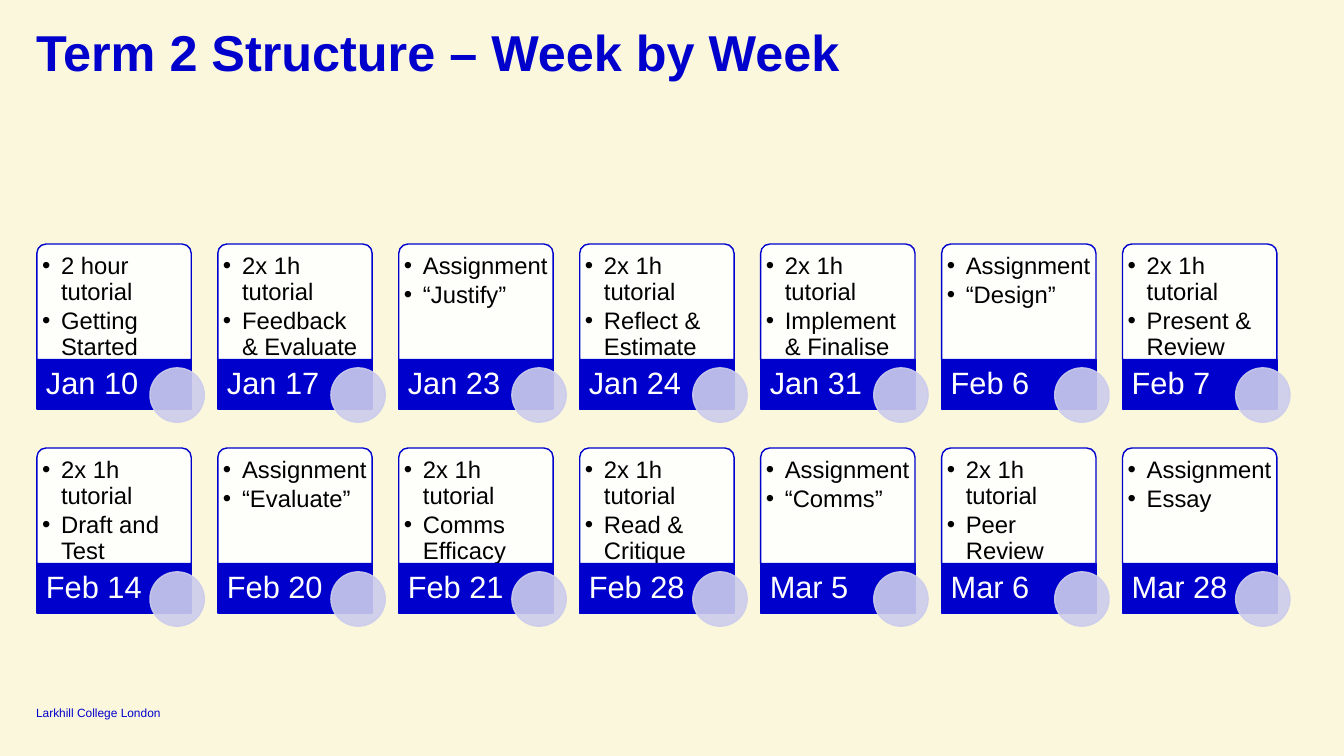
"""Build the week by week overview slide for term 2."""
from dataclasses import dataclass

from lxml.etree import SubElement
from pptx import Presentation
from pptx.dml.color import RGBColor
from pptx.dml.fill import FillFormat
from pptx.enum.shapes import MSO_SHAPE
from pptx.enum.text import MSO_ANCHOR, MSO_AUTO_SIZE, PP_ALIGN
from pptx.oxml.ns import qn
from pptx.shapes.autoshape import Shape
from pptx.slide import Slide
from pptx.util import Cm, Pt

CREAM = RGBColor(0xFB, 0xF7, 0xDC)
BLUE = RGBColor(0x00, 0x00, 0xCD)
LAVENDER = RGBColor(0xCC, 0xCC, 0xED)
WHITE = RGBColor(0xFF, 0xFF, 0xFF)
BLACK = RGBColor(0x00, 0x00, 0x00)

FONT = "Arial"
COLUMNS = 7
GRID_LEFT, GRID_TOP = 0.93, 6.15
COLUMN_PITCH, ROW_PITCH = 4.56, 5.14
CARD_WIDTH, CARD_HEIGHT = 3.89, 2.91
DATE_WIDTH, DATE_HEIGHT = 2.74, 1.25
CIRCLE_LEFT, CIRCLE_TOP, CIRCLE_SIZE = 2.85, 3.12, 1.37
CARD_PADDING = 0.07
BULLET_INDENT = 0.48


@dataclass(frozen=True)
class Session:
    date: str
    items: tuple[str, ...]


@dataclass(frozen=True)
class Box:
    left: float
    top: float
    width: float
    height: float

    def lengths(self) -> tuple[Cm, Cm, Cm, Cm]:
        return Cm(self.left), Cm(self.top), Cm(self.width), Cm(self.height)


TUTORIAL = "2x 1h tutorial"
ASSIGNMENT = "Assignment"
SESSIONS = (
    Session("Jan 10", ("2 hour tutorial", "Getting Started")),
    Session("Jan 17", (TUTORIAL, "Feedback & Evaluate")),
    Session("Jan 23", (ASSIGNMENT, "“Justify”")),
    Session("Jan 24", (TUTORIAL, "Reflect & Estimate")),
    Session("Jan 31", (TUTORIAL, "Implement & Finalise")),
    Session("Feb 6", (ASSIGNMENT, "“Design”")),
    Session("Feb 7", (TUTORIAL, "Present & Review")),
    Session("Feb 14", (TUTORIAL, "Draft and Test")),
    Session("Feb 20", (ASSIGNMENT, "“Evaluate”")),
    Session("Feb 21", (TUTORIAL, "Comms Efficacy")),
    Session("Feb 28", (TUTORIAL, "Read & Critique")),
    Session("Mar 5", (ASSIGNMENT, "“Comms”")),
    Session("Mar 6", (TUTORIAL, "Peer Review")),
    Session("Mar 28", (ASSIGNMENT, "Essay")),
)


def write_text(shape: Shape, *texts: str, size: float, color: RGBColor,
               bold: bool = False, bulleted: bool = False,
               anchor: MSO_ANCHOR = MSO_ANCHOR.TOP, line_spacing: float = 0.9,
               space_after: float = 0,
               insets: tuple[float, float, float, float] = (0, 0, 0, 0)) -> None:
    frame = shape.text_frame
    frame.word_wrap = True
    frame.auto_size = MSO_AUTO_SIZE.NONE
    frame.vertical_anchor = anchor
    (frame.margin_left, frame.margin_top,
     frame.margin_right, frame.margin_bottom) = map(Cm, insets)
    frame.text = "\n".join(texts)
    for paragraph in frame.paragraphs:
        paragraph.alignment = PP_ALIGN.LEFT
        paragraph.line_spacing = line_spacing
        paragraph.space_before = Pt(0)
        paragraph.space_after = Pt(space_after)
        font = paragraph.runs[0].font
        font.name, font.size, font.bold = FONT, Pt(size), bold
        font.color.rgb = color
        if bulleted:
            paragraph.level = 1
            properties = paragraph._p.get_or_add_pPr()
            properties.set("marL", str(Cm(BULLET_INDENT)))
            properties.set("indent", str(-Cm(BULLET_INDENT)))
            SubElement(properties, qn("a:buFont"), typeface=FONT)
            SubElement(properties, qn("a:buChar"), char="•")


def paint(fill: FillFormat, color: RGBColor, opacity: int) -> None:
    fill.solid()
    fill.fore_color.rgb = color
    if opacity < 100:
        color_element = fill._xPr.find(f".//{qn('a:srgbClr')}")
        SubElement(color_element, qn("a:alpha"), val=str(opacity * 1000))


def add_panel(slide: Slide, kind: MSO_SHAPE, box: Box, fill: RGBColor,
              line: RGBColor, fill_opacity: int = 100,
              line_opacity: int = 100) -> Shape:
    shape = slide.shapes.add_shape(kind, *box.lengths())
    shape.shadow.inherit = False
    paint(shape.fill, fill, fill_opacity)
    paint(shape.line.fill, line, line_opacity)
    shape.line.width = Pt(1)
    return shape


def add_session(slide: Slide, session: Session, left: float, top: float) -> None:
    card = add_panel(slide, MSO_SHAPE.ROUND_2_SAME_RECTANGLE,
                     Box(left, top, CARD_WIDTH, CARD_HEIGHT),
                     WHITE, BLUE, fill_opacity=90)
    card.adjustments[0] = 0.08
    card.adjustments[1] = 0

    items_box = Box(left + CARD_PADDING, top + CARD_PADDING,
                    CARD_WIDTH - 2 * CARD_PADDING, CARD_HEIGHT - CARD_PADDING)
    items = slide.shapes.add_textbox(*items_box.lengths())
    write_text(items, *session.items, size=17, color=BLACK, bulleted=True,
               space_after=2.55, insets=(0.06, 0.18, 0.06, 0.06))

    date_top = top + CARD_HEIGHT
    add_panel(slide, MSO_SHAPE.RECTANGLE,
              Box(left, date_top, CARD_WIDTH, DATE_HEIGHT), BLUE, BLUE)
    date_box = Box(left, date_top, DATE_WIDTH, DATE_HEIGHT)
    date = slide.shapes.add_textbox(*date_box.lengths())
    write_text(date, session.date, size=22, color=WHITE,
               anchor=MSO_ANCHOR.MIDDLE, space_after=7.7,
               insets=(0.23, 0, 0.08, 0))

    add_panel(slide, MSO_SHAPE.OVAL,
              Box(left + CIRCLE_LEFT, top + CIRCLE_TOP, CIRCLE_SIZE, CIRCLE_SIZE),
              LAVENDER, LAVENDER, fill_opacity=90, line_opacity=90)


def main() -> None:
    presentation = Presentation()
    presentation.slide_width, presentation.slide_height = Cm(33.87), Cm(19.05)
    slide = presentation.slides.add_slide(presentation.slide_layouts[5])
    paint(slide.background.fill, CREAM, 100)

    footer = slide.shapes.add_textbox(*Box(0.91, 17.75, 3.94, 0.38).lengths())
    write_text(footer, "Larkhill College London", size=8.5, color=BLUE,
               anchor=MSO_ANCHOR.BOTTOM, line_spacing=1)

    title = slide.shapes.title
    title.left, title.top, title.width, title.height = Box(
        0.91, 0.71, 32.05, 1.04).lengths()
    write_text(title, "Term 2 Structure – Week by Week", size=36, color=BLUE,
               bold=True)

    for index, session in enumerate(SESSIONS):
        row, column = divmod(index, COLUMNS)
        add_session(slide, session, GRID_LEFT + column * COLUMN_PITCH,
                    GRID_TOP + row * ROW_PITCH)

    presentation.save("out.pptx")


if __name__ == "__main__":
    main()
